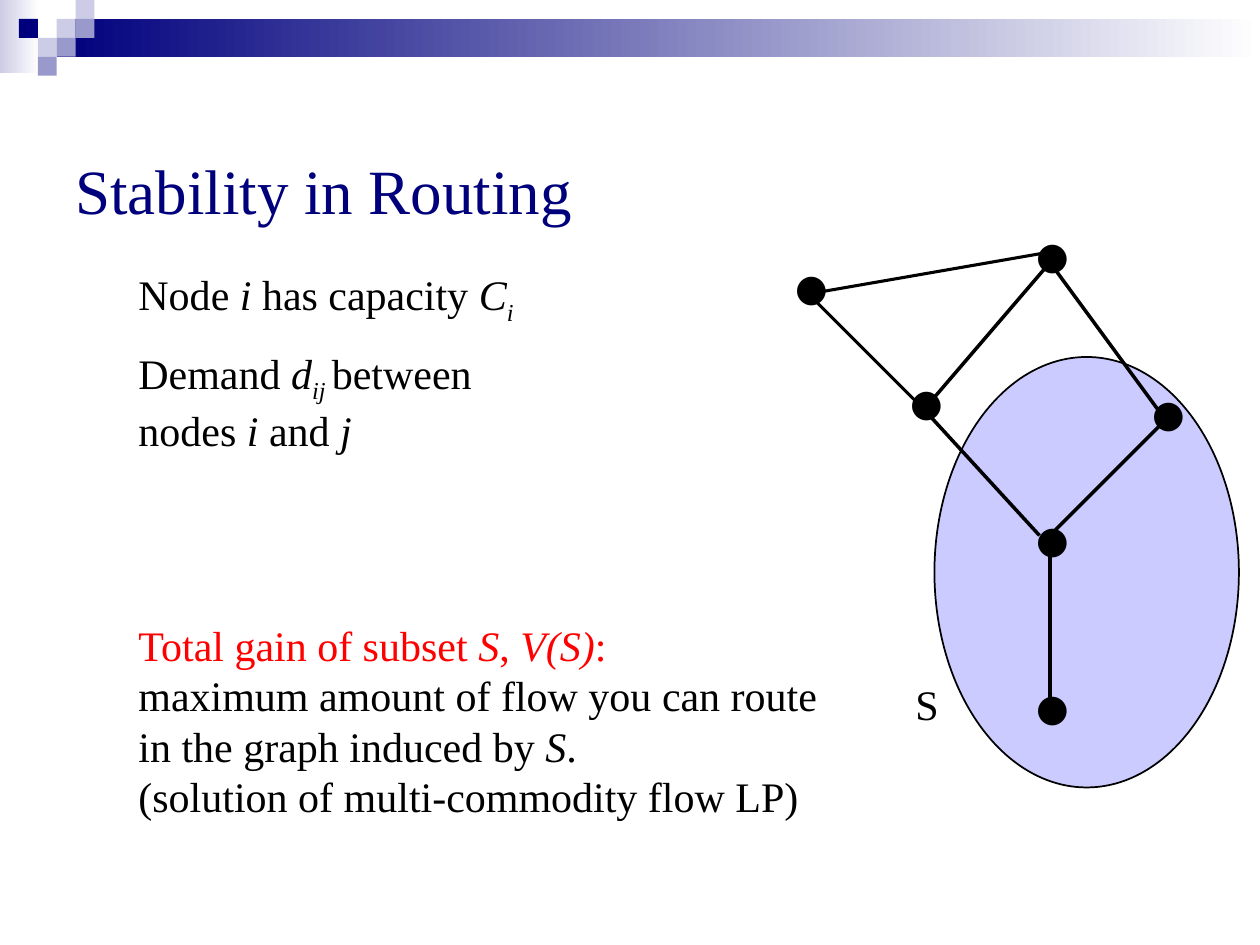
"""Build the slide on stability in routing."""
from lxml import etree
from pptx import Presentation
from pptx.dml.color import RGBColor
from pptx.enum.shapes import MSO_CONNECTOR, MSO_SHAPE
from pptx.enum.text import MSO_ANCHOR, MSO_AUTO_SIZE
from pptx.oxml.ns import qn
from pptx.util import Inches, Pt

RECT, OVAL = MSO_SHAPE.RECTANGLE, MSO_SHAPE.OVAL
STRAIGHT = MSO_CONNECTOR.STRAIGHT
MIDDLE, TOP = MSO_ANCHOR.MIDDLE, MSO_ANCHOR.TOP
GROW, FIXED = MSO_AUTO_SIZE.SHAPE_TO_FIT_TEXT, MSO_AUTO_SIZE.NONE

THEME = dict(
    navy="00007D", pale="CCCCE6", mid="9999CC", white="FFFFFF", black="000000",
    red="FF0000", subset="9999FF", serif="Times New Roman", sans="Lato",
    title=36, body=24, node=44, thin=1.75, thick=2, outline=1,
)
UNIT = Inches(1) // 12
TILE = 0.15

BANDS = [((0, 0, 0.31, 0.58), "pale"), ((0.45, 0.15, 9.55, 0.3), "navy")]
TILES = [(3, 1, "pale"), (4, 0, "pale"), (4, 1, "mid"), (2, 2, "pale"),
         (1, 1, "navy"), (3, 2, "mid"), (2, 3, "mid")]

SUBSET = (89, 34, 29, 41)
NODES = [(97, 19), (97, 46), (97, 62), (74, 22), (108, 34), (85, 33)]
EDGES = [
    ((100, 25), (111, 40), "thick"), ((88, 39), (99, 51), "thick"),
    ((111, 40), (99, 52), "thick"), ((100, 52), (100, 67), "thick"),
    ((88, 39), (100, 25), "thick"), ((88, 39), (77, 28), "thin"),
    ((77, 28), (100, 24), "thin"),
]

TITLE = [[("Stability in Routing", "")]]
BODY = [
    [("Node ", ""), ("i", "i"), (" has capacity ", ""), ("C", "i"), ("i", "is")],
    [("Demand ", ""), ("d", "i"), ("ij ", "is"), ("between \nnodes ", ""),
     ("i ", "i"), ("and", ""), (" j", "i")],
    [("Total gain of subset ", "r"), ("S", "ir"), (", ", "r"), ("V(S)", "ir"),
     (":\n", "r"),
     ("maximum amount of flow you can route in the graph induced by ", ""),
     ("S", "i"), (". \n(solution of multi-commodity flow LP)", "")],
]
SECTION_GAP = 94


def rgb(name):
    return RGBColor.from_string(THEME[name])


def add_shape(s, kind, box, color):
    sp = s.shapes.add_shape(kind, *box)
    sp.shadow.inherit = False
    sp.line.fill.background()
    sp.fill.solid()
    sp.fill.fore_color.rgb = rgb(color)
    return sp


def add_run(p, text, flags, size, font, color):
    r = p.add_run()
    r.text = text
    r.font.name, r.font.size = THEME[font], Pt(THEME[size])
    r.font.italic = "i" in flags
    r.font.color.rgb = rgb("red" if "r" in flags else color)
    if "s" in flags:
        r.font._element.set("baseline", "-25000")


def add_text(s, box, paragraphs, size, font="serif", color="black",
             anchor=TOP, fit=GROW):
    tf = s.shapes.add_textbox(*(UNIT * v for v in box)).text_frame
    tf.word_wrap, tf.vertical_anchor, tf.auto_size = True, anchor, fit
    for n, runs in enumerate(paragraphs):
        p = tf.paragraphs[0] if n == 0 else tf.add_paragraph()
        if n == 2:
            p.space_before = Pt(SECTION_GAP)
        elif fit == GROW:
            before = etree.SubElement(p._p.get_or_add_pPr(), qn("a:spcBef"))
            etree.SubElement(before, qn("a:spcPct")).set("val", "50000")
        for text, flags in runs:
            for k, line in enumerate(text.split("\n")):
                if k:
                    p.add_line_break()
                if line:
                    add_run(p, line, flags, size, font, color)


def add_edge(s, start, end, width):
    line = s.shapes.add_connector(STRAIGHT, *(UNIT * v for v in start + end))
    line.line.color.rgb = rgb("black")
    line.line.width = Pt(THEME[width])
    etree.SubElement(line._element.spPr, qn("a:effectLst"))


prs = Presentation()
prs.slide_width, prs.slide_height = Inches(10), Inches(7.5)
s = prs.slides.add_slide(prs.slide_layouts[6])

for box, color in BANDS:
    band = add_shape(s, RECT, [Inches(v) for v in box], color)
    band.fill.gradient()
    band.fill.gradient_angle = 0
    for stop, name in zip(band.fill.gradient_stops, (color, "white")):
        stop.color.rgb = rgb(name)
for col, row, color in TILES:
    add_shape(s, RECT, [Inches(TILE * v) for v in (col, row, 1, 1)], color)

subset = add_shape(s, OVAL, [UNIT * v for v in SUBSET], "subset")
fill_color = subset._element.spPr.find(qn("a:solidFill"))[0]
etree.SubElement(fill_color, qn("a:alpha")).set("val", "50000")
subset.line.color.rgb = rgb("black")
subset.line.width = Pt(THEME["outline"])

add_text(s, (6, 9, 108, 18), TITLE, "title", color="navy", anchor=MIDDLE, fit=FIXED)
for edge in EDGES:
    add_edge(s, *edge)
for node in NODES:
    add_text(s, node + (6, 10), [[("•", "")]], "node", font="sans")
add_text(s, (12, 25, 68, 54), BODY, "body")
add_text(s, (86, 64, 12, 6), [[("S", "")]], "body")

prs.save("out.pptx")
